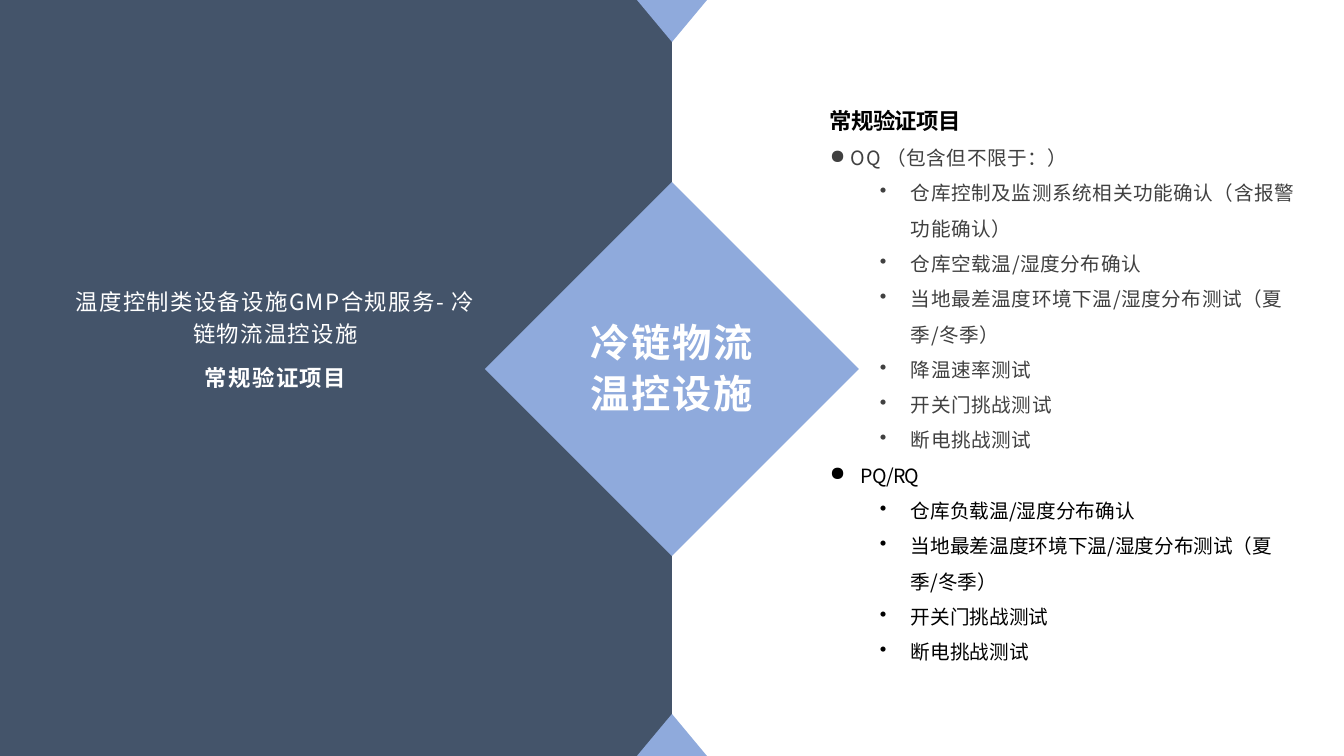
from dataclasses import dataclass

from lxml import etree
from pptx import Presentation
from pptx import util as u
from pptx.dml.color import RGBColor
from pptx.enum import shapes, text
from pptx.oxml import ns

# Content
SERVICE = "温度控制类设备设施GMP合规服务- 冷链物流温控设施"
TOPIC = "常规验证项目"
DIAMOND_LINES = ["冷链物流", "温控设施"]
TESTS = [
    ("OQ （包含但不限于：）", [
        "仓库控制及监测系统相关功能确认（含报警功能确认）",
        "仓库空载温/湿度分布确认",
        "当地最差温度环境下温/湿度分布测试（夏季/冬季）",
        "降温速率测试",
        "开关门挑战测试",
        "断电挑战测试",
    ]),
    ("PQ/RQ", [
        "仓库负载温/湿度分布确认",
        "当地最差温度环境下温/湿度分布测试（夏季/冬季）",
        "开关门挑战测试",
        "断电挑战测试",
    ]),
]


@dataclass(frozen=True)
class Theme:
    font: str = "Noto Sans CJK SC"
    navy: str = "44546A"
    blue: str = "8FAADC"
    white: str = "FFFFFF"
    black: str = "000000"
    grey: str = "404040"
    diamond_size: int = 28
    heading_size: int = 16
    list_size: int = 14


THEME = Theme()

# Layout in px
SCALE = 914400 / 100.8
WIDTH, HEIGHT = 1344, 756
MIDDLE = WIDTH // 2
TRIANGLE = (70, 42)
DIAMOND_SIDE, DIAMOND_TOP = 374, 182
DIAMOND_TEXT = (497, 256, 349, 218)
TITLE_BOX = (67, 118, 417, 438)
LIST_BOX = (823, 96, 480, 570)
ITEM_LEFT, HANGING = 81, 31
# Per group: text start, text colour, spacing of the head and of its items
GROUP_STYLES = [
    (21, THEME.grey, 0.4, 0.4),
    (HANGING, THEME.black, -0.5, 0),
]


def px(value):
    return u.Emu(round(value * SCALE))


def place(box, frame):
    for name, value in zip(("left", "top", "width", "height"), frame):
        setattr(box, name, px(value))


def add_figure(kind, frame, color):
    figure = page.shapes.add_shape(kind, *map(px, frame))
    figure.shadow.inherit = False
    figure.fill.solid()
    figure.fill.fore_color.rgb = RGBColor.from_string(color)
    figure.line.fill.background()
    return figure


def set_frame(box, anchor):
    settings = dict(word_wrap=True, auto_size=text.MSO_AUTO_SIZE.NONE,
                    vertical_anchor=anchor,
                    margin_left=px(7), margin_right=px(7),
                    margin_top=px(3), margin_bottom=px(3))
    for name, value in settings.items():
        setattr(box.text_frame, name, value)


def write(box, words, size, color, tracking, pitch, bold=False, **layout):
    """Fill the first empty paragraph, or add one, and format it."""
    frame = box.text_frame
    para = frame.paragraphs[0]
    if para.runs:
        para = frame.add_paragraph()
    for name, value in dict(line_spacing=u.Pt(pitch), **layout).items():
        setattr(para, name, value)
    span = para.add_run()
    span.text = words
    for name, value in dict(size=u.Pt(size), bold=bold, name=THEME.font).items():
        setattr(span.font, name, value)
    span.font.color.rgb = RGBColor.from_string(color)
    props = span._r.get_or_add_rPr()
    props.set("spc", str(round(tracking * 100)))
    etree.SubElement(props, ns.qn("a:ea")).set("typeface", THEME.font)
    return para


def add_bullet(para, mark, left, hanging):
    props = para._p.get_or_add_pPr()
    props.set("marL", str(px(left)))
    props.set("indent", str(-px(hanging)))
    etree.SubElement(props, ns.qn("a:buChar")).set("char", mark)


deck = Presentation()
deck.slide_width, deck.slide_height = px(WIDTH), px(HEIGHT)
page = deck.slides.add_slide(deck.slide_layouts[5])
KIND = shapes.MSO_SHAPE
CENTER, LEFT = text.PP_ALIGN.CENTER, text.PP_ALIGN.LEFT
MID = text.MSO_ANCHOR.MIDDLE

# Left panel, edge triangles and diamond
add_figure(KIND.RECTANGLE, (0, 0, MIDDLE, HEIGHT), THEME.navy)
for top, turn in ((0, 180), (HEIGHT - TRIANGLE[1], 0)):
    triangle = add_figure(KIND.ISOSCELES_TRIANGLE,
                          (MIDDLE - TRIANGLE[0] / 2, top, *TRIANGLE), THEME.blue)
    triangle.rotation = turn
add_figure(KIND.DIAMOND, (MIDDLE - DIAMOND_SIDE / 2, DIAMOND_TOP,
                          DIAMOND_SIDE, DIAMOND_SIDE), THEME.blue)

# Diamond text
diamond_text = page.shapes.add_textbox(*map(px, DIAMOND_TEXT))
set_frame(diamond_text, MID)
for line in DIAMOND_LINES:
    write(diamond_text, line, THEME.diamond_size, THEME.white, 1.2, 37,
          bold=True, alignment=CENTER)

# Title, brought in front of the panel
title = page.shapes.title
place(title, TITLE_BOX)
set_frame(title, MID)
write(title, SERVICE, THEME.heading_size, THEME.white, 1, 23, alignment=CENTER)
write(title, TOPIC, THEME.heading_size, THEME.white, 1, 23, bold=True,
      alignment=CENTER, space_before=u.Pt(8))
page.shapes._spTree.append(title._element)

# Test list
tests = page.shapes.add_textbox(*map(px, LIST_BOX))
set_frame(tests, text.MSO_ANCHOR.TOP)
write(tests, TOPIC, THEME.heading_size, THEME.black, -0.5, 25.2,
      bold=True, alignment=LEFT)
for (head, items), (start, color, head_gap, item_gap) in zip(TESTS, GROUP_STYLES):
    para = write(tests, head, THEME.list_size, color, head_gap, 25.2, alignment=LEFT)
    add_bullet(para, "●", start, start)
    for item in items:
        para = write(tests, item, THEME.list_size, color, item_gap, 25.2,
                     alignment=LEFT, level=1)
        add_bullet(para, "•", ITEM_LEFT, HANGING)

deck.save("out.pptx")
